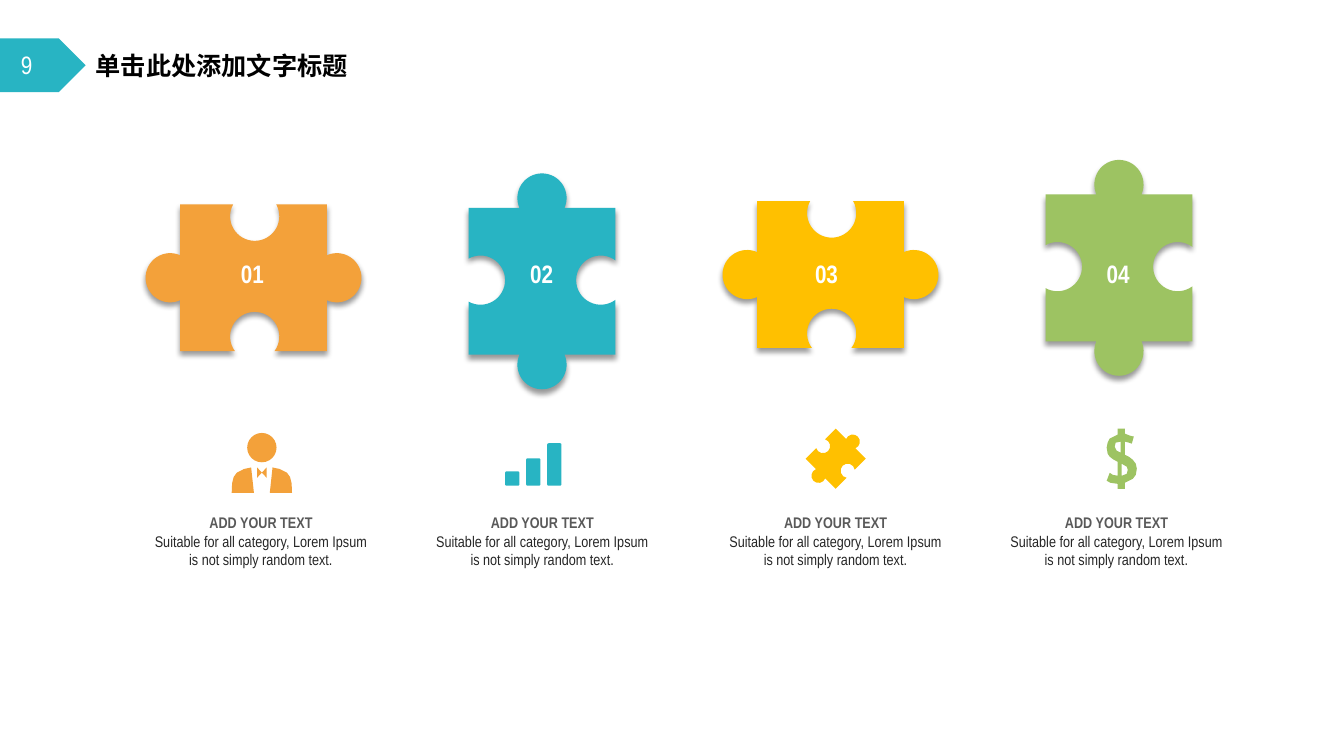
from dataclasses import dataclass
from math import acos, asin, cos, degrees, radians, sin, tan

from lxml.etree import SubElement
from pptx import Presentation
from pptx.dml.color import RGBColor as Rgb
from pptx.enum.shapes import MSO_SHAPE as Kind
from pptx.enum.text import MSO_ANCHOR as Anchor, MSO_AUTO_SIZE as Fit, PP_ALIGN as Align
from pptx.oxml.ns import qn
from pptx.util import Cm, Pt


@dataclass(frozen=True)
class Theme:
    font: str = "Arial Narrow"
    orange: str = "F3A13A"
    teal: str = "28B4C3"
    yellow: str = "FFC000"
    green: str = "9DC362"
    white: str = "FFFFFF"
    black: str = "000000"
    head: str = "595959"
    body: str = "262626"
    large: int = 18
    small: int = 11


def arc(x, y, radius, start, end, parts=4):
    step = radians(end - start) / parts
    pull = 4 / 3 * tan(step / 4)

    def spot(turn, lean):
        return (x + radius * (cos(turn) - lean * sin(turn)),
                y + radius * (sin(turn) + lean * cos(turn)))

    points = [spot(radians(start), 0)] * 3
    for i in range(parts):
        turn = radians(start) + i * step
        points += [spot(turn, pull), spot(turn + step, -pull), spot(turn + step, 0)]
    return points


def puzzle(dip=0):
    half, radius, knob, left, right = 1.85, 0.62, 0.25, 0.3, 0.37
    neck = degrees(asin(knob / radius))
    west = degrees(acos(left / radius))
    east = degrees(acos(right / radius))
    return [
        (-half, -half),
        *arc(0, -half - knob, radius, 180 - neck, 360 + neck),
        *[(half, -half)] * 3,
        *arc(half - right, dip, radius, -east, east - 360),
        *[(half, half)] * 3,
        *arc(0, half + knob, radius, -neck, 180 + neck),
        *[(-half, half)] * 3,
        *arc(left - half, dip, radius, 180 - west, west - 180),
    ]


def spin(points, angle, scale):
    c, s = cos(radians(angle)) * scale, sin(radians(angle)) * scale
    return [(x * c - y * s, x * s + y * c) for x, y in points]


class Deck:
    def __init__(self, theme):
        self.theme = theme
        self.file = Presentation()
        self.file.slide_width, self.file.slide_height = Cm(33.87), Cm(19.05)
        self.slide = self.file.slides.add_slide(self.file.slide_layouts[5])
        self.shapes = self.slide.shapes

    def paint(self, shape, color):
        shape.shadow.inherit = False
        shape.fill.solid()
        shape.fill.fore_color.rgb = Rgb.from_string(color)
        shape.line.fill.background()
        return shape

    def block(self, kind, x, y, w, h, color):
        shape = self.shapes.add_shape(kind, Cm(x), Cm(y), Cm(w), Cm(h))
        return self.paint(shape, color)

    def outline(self, x, y, loops, color):
        pen = None
        for loop in loops:
            first, *rest = [(Cm(x + a), Cm(y + b)) for a, b in loop]
            if pen is None:
                pen = self.shapes.build_freeform(*first)
            else:
                pen.move_to(*first)
            pen.add_line_segments(rest, close=True)
        return self.paint(pen.convert_to_shape(), color)

    def curve(self, x, y, loop, color):
        shape = self.outline(x, y, [loop], color)
        lines = list(shape._element.iter(qn("a:lnTo")))[:len(loop) - 1]
        for i in range(0, len(lines), 3):
            trio = lines[i:i + 3]
            bend = trio[0].getparent().makeelement(qn("a:cubicBezTo"))
            trio[0].addprevious(bend)
            for line in trio:
                bend.append(line[0])
                line.getparent().remove(line)
        return shape

    def shade(self, shape):
        effects = shape._element.spPr.find(qn("a:effectLst"))
        cast = SubElement(effects, qn("a:outerShdw"), blurRad=str(Pt(4)),
                          dist=str(Pt(3)), dir="5400000", algn="t", rotWithShape="0")
        tint = SubElement(cast, qn("a:srgbClr"), val=self.theme.black)
        SubElement(tint, qn("a:alpha"), val="40000")

    def style(self, part, size, color, bold):
        for run in part.runs:
            run.font.name = self.theme.font
            run.font.size = Pt(size)
            run.font.bold = bold
            run.font.color.rgb = Rgb.from_string(color)

    def title(self, text, x, y, w, h):
        box = self.shapes.title
        box.left, box.top, box.width, box.height = Cm(x), Cm(y), Cm(w), Cm(h)
        frame = box.text_frame
        frame.text = text
        frame.auto_size = Fit.NONE
        frame.vertical_anchor = Anchor.TOP
        frame.paragraphs[0].alignment = Align.LEFT
        self.style(frame.paragraphs[0], self.theme.large, self.theme.black, True)

    def label(self, text, x, y, w, h, bold=True):
        frame = self.shapes.add_textbox(Cm(x), Cm(y), Cm(w), Cm(h)).text_frame
        frame.text = text
        self.style(frame.paragraphs[0], self.theme.large, self.theme.white, bold)

    def note(self, head, body, x, y, w, h):
        frame = self.shapes.add_textbox(Cm(x), Cm(y), Cm(w), Cm(h)).text_frame
        frame.word_wrap = True
        frame.margin_left = frame.margin_right = Cm(0.32)
        frame.text = f"{head}\n{body}"
        top, low = frame.paragraphs
        top.alignment = low.alignment = Align.CENTER
        top.line_spacing = 1.3
        self.style(top, self.theme.small, self.theme.head, True)
        self.style(low, self.theme.small, self.theme.body, False)

    def person(self, color):
        self.block(Kind.OVAL, 6.23, 10.91, 0.74, 0.74, color)
        coat = [(0.27, 0), (0.45, 0.04), (0.63, 0.13), (0.71, 0.24),
                (0.75, 0.4), (0.76, 0.64), (0.2, 0.64)]
        bow = [(0.12, 0), (0, 0.13), (0.12, 0.26)]
        for part in (coat, bow):
            for side in (1, -1):
                self.outline(6.6, 11.78, [[(side * a, b) for a, b in part]], color)

    def bars(self, color):
        for i, tall in enumerate((0.36, 0.69, 1.07)):
            bar = self.block(Kind.ROUNDED_RECTANGLE, 12.73 + 0.53 * i,
                             12.24 - tall, 0.36, tall, color)
            bar.adjustments[0] = 0.1

    def jigsaw(self, color):
        self.curve(21.06, 11.56, spin(puzzle(), 45, 0.29), color)

    def dollar(self, color):
        edge = [(-4, 25), (-11, 24), (-15, 22), (-12, 14), (-9, 16), (-4, 17), (-4, 3),
                (-8, 1), (-12, -2), (-14, -5), (-15, -11), (-14, -16), (-12, -20),
                (-4, -24), (-4, -30), (3, -30), (3, -25), (8, -23), (12, -22),
                (10, -15), (7, -16), (3, -17), (3, -4), (7, -2), (11, 1), (14, 5),
                (15, 10), (14, 16), (11, 20), (3, 24), (3, 30), (-4, 30)]
        upper = [(-7, -12), (-5, -8), (-1, -6), (-1, -17), (-6, -16)]
        lower = [(6, 11), (5, 8), (0, 5), (0, 17), (5, 15)]
        loops = [spin(loop, 0, 0.76 / 30) for loop in (edge, upper, lower)]
        self.outline(28.27, 11.56, loops, color)


def main():
    theme = Theme()
    deck = Deck(theme)
    deck.block(Kind.PENTAGON, 0, 0.97, 2.16, 1.35, theme.teal)
    deck.label("9", 0.28, 1.13, 1.27, 1.02, bold=False)
    deck.title("单击此处添加文字标题", 2.16, 1.14, 7.47, 1.02)

    tall = puzzle(-0.03)
    wide = [(y, x) for x, y in puzzle(0.03)]
    items = [
        (wide, 6.39, 7.0, theme.orange, deck.person, 5.82, 3.48),
        (tall, 13.66, 7.09, theme.teal, deck.bars, 13.11, 10.57),
        (wide, 20.93, 6.92, theme.yellow, deck.jigsaw, 20.29, 17.96),
        (tall, 28.2, 6.75, theme.green, deck.dollar, 27.64, 25.04),
    ]
    for i, (piece, x, y, color, icon, mark, note) in enumerate(items, 1):
        deck.shade(deck.curve(x, y, piece, color))
        icon(color)
        deck.note("ADD YOUR TEXT",
                  "Suitable for all category, Lorem Ipsum is not simply random text.",
                  note, 12.67, 6.2, 1.8)
        deck.label(f"{i:02}", mark, 6.38, 1.35, 1.02)
    deck.file.save("out.pptx")


if __name__ == "__main__":
    main()
